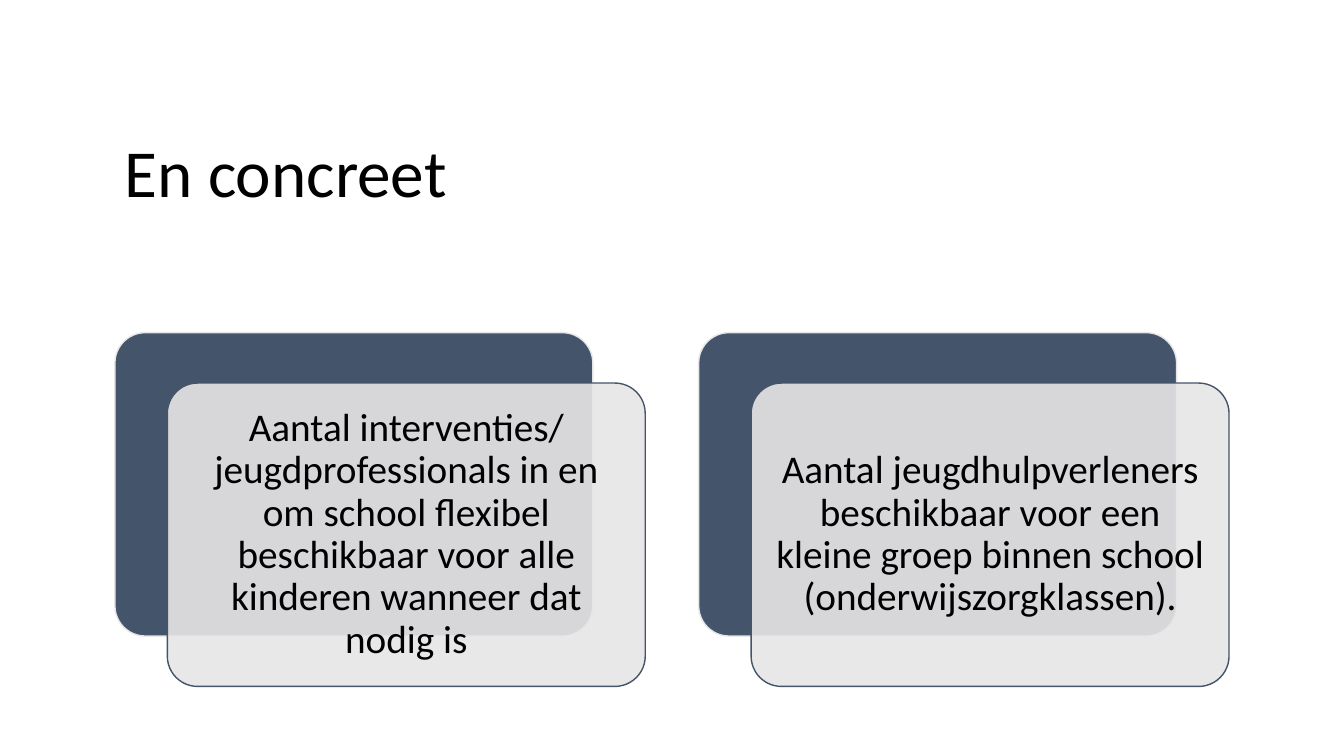
from lxml.etree import SubElement
from pptx import Presentation
from pptx.dml.color import RGBColor
from pptx.enum.shapes import MSO_SHAPE
from pptx.enum.text import MSO_ANCHOR, PP_ALIGN
from pptx.oxml.ns import qn
from pptx.util import Inches, Pt


def rgb(value):
    return RGBColor.from_string(value)


class Deck:
    """Style and current slide; lengths are in grid units of 0.1 inch."""
    FONT, INK, DARK, LIGHT = "Calibri", "000000", "44546A", "E7E6E6"
    UNIT = 0.1

    def __init__(self, prs):
        self.s = prs.slides.add_slide(prs.slide_layouts[6])

    def grid(self, *units):
        return [Inches(u * self.UNIT) for u in units]

    def text(self, box, text, size, align, inset):
        tf = self.s.shapes.add_textbox(*self.grid(*box)).text_frame
        side, top = self.grid(*inset)
        frame = dict(word_wrap=True, vertical_anchor=MSO_ANCHOR.MIDDLE,
                     margin_left=side, margin_right=side,
                     margin_top=top, margin_bottom=top)
        for name, value in frame.items():
            setattr(tf, name, value)
        p = tf.paragraphs[0]
        p.alignment, p.line_spacing = align, 0.9
        r = p.add_run()
        r.text = text
        for name, value in dict(name=self.FONT, size=Pt(size)).items():
            setattr(r.font, name, value)
        r.font.color.rgb = rgb(self.INK)

    def panel(self, box, fill, line, opacity=100):
        sp = self.s.shapes.add_shape(MSO_SHAPE.ROUNDED_RECTANGLE, *self.grid(*box))
        sp.adjustments[0] = 0.1
        sp.shadow.inherit = False
        sp.fill.solid()
        sp.fill.fore_color.rgb = rgb(fill)
        sp.line.color.rgb = rgb(line)
        sp.line.width = Pt(1)
        if opacity < 100:
            color = sp.fill._xPr.find(qn("a:solidFill"))[0]
            SubElement(color, qn("a:alpha"), val=str(opacity * 1000))

    def card(self, x, y, w, h, text):
        shift_x, shift_y, pad = 5.2, 5, 0.9
        front_x, front_y = x + shift_x, y + shift_y
        self.panel((x, y, w, h), self.DARK, self.LIGHT)
        self.panel((front_x, front_y, w, h), self.LIGHT, self.DARK, opacity=90)
        self.text((front_x + pad, front_y + pad, w - 2 * pad, h - 2 * pad),
                  text, 28, PP_ALIGN.CENTER, (1.2, 1.2))


def main():
    prs = Presentation()
    prs.slide_width, prs.slide_height = Inches(13.33), Inches(7.5)
    deck = Deck(prs)

    # Title
    left = 11.4
    deck.text((left, 8.9, 111.3, 17), "En concreet", 48, PP_ALIGN.LEFT, (1, 0.5))

    # Two layered cards
    cards = [
        "Aantal interventies/ jeugdprofessionals in en om school flexibel "
        "beschikbaar voor alle kinderen wanneer dat nodig is",
        "Aantal jeugdhulpverleners beschikbaar voor een kleine groep binnen "
        "school (onderwijszorgklassen).",
    ]
    pitch = 57.9
    for i, text in enumerate(cards):
        deck.card(left + i * pitch, 33, 47.4, 30.1, text)

    prs.save("out.pptx")


if __name__ == "__main__":
    main()
